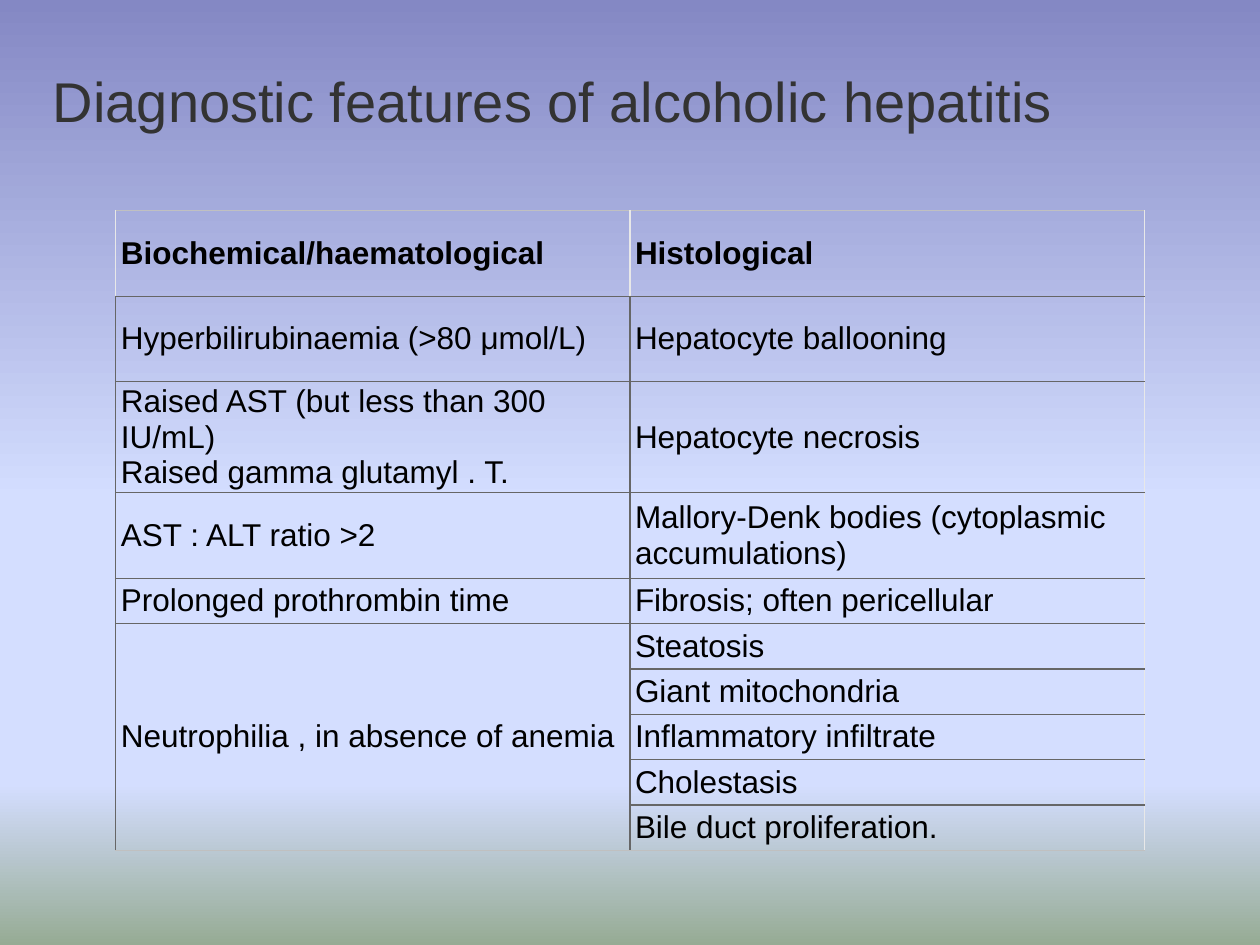
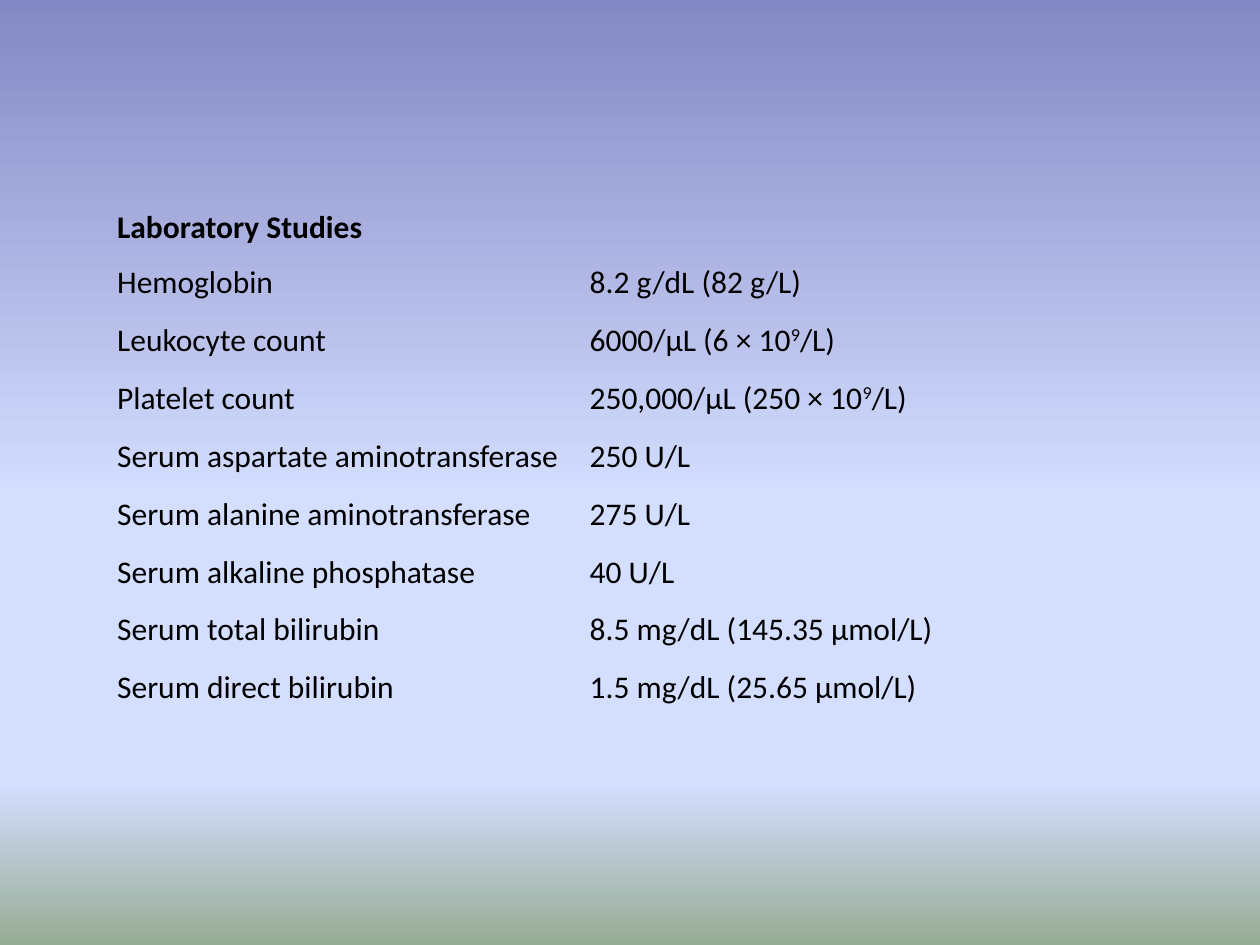
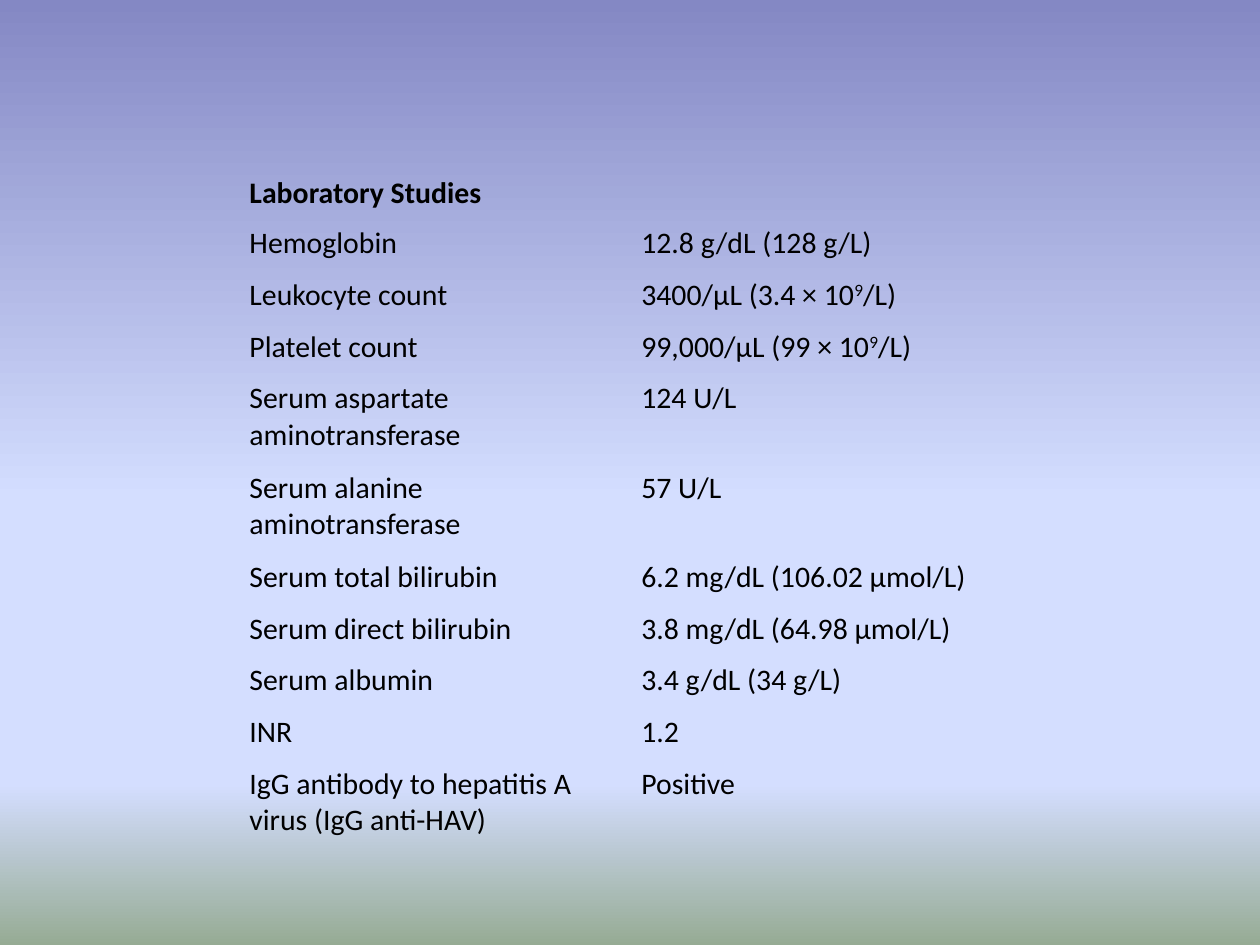
from dataclasses import dataclass

from lxml.etree import SubElement as Sub
from pptx import Presentation
from pptx.dml.color import RGBColor as RGB
from pptx.enum.text import MSO_ANCHOR as Anchor
from pptx.oxml.ns import qn
from pptx.util import Inches, Pt


@dataclass(frozen=True)
class Theme:
    sky: tuple = ((0, "8488C4"), (53, "D4DEFF"), (83, "D4DEFF"), (100, "96AB94"))
    ink: str = "000000"
    head: str = "333333"
    dark: str = "666666"
    mid: str = "C0C0C0"
    pale: str = "E8E8E8"
    line: float = 0.75
    sans: str = "Arial"
    body: str = "Calibri"
    big: int = 32
    text: int = 18
    small: int = 17
    plain: str = "{2D5ABB26-0587-4C30-8999-92F81FD0307C}"


theme = Theme()


def write(para, text, face, size, color, bold=False):
    """Fill a paragraph; a caret lifts the one character after it."""
    font = para.font
    font.name, font.size, font.bold = face, Pt(size), bold
    font.color.rgb = RGB.from_string(color)
    first, *rest = text.split("^")
    para.add_run().text = first
    for part in rest:
        run = para.add_run()
        run.text = part[0]
        run._r.get_or_add_rPr().set("baseline", "30000")
        para.add_run().text = part[1:]


def grid(slide, left, top, width, highs, rows, face, size, pad, mid=False):
    """Add a plain two-column table; None marks a cell to be merged."""
    table = slide.shapes.add_table(
        len(rows), 2, Inches(left), Inches(top),
        Inches(2 * width), Inches(sum(highs))).table
    table.first_row = table.horz_banding = False
    table._tbl.tblPr.find(qn("a:tableStyleId")).text = theme.plain
    for col in table.columns:
        col.width = Inches(width)
    for y, row in enumerate(rows):
        table.rows[y].height = Inches(highs[y])
        for x, text in enumerate(row):
            cell = table.cell(y, x)
            cell.fill.background()
            cell.margin_left = cell.margin_right = Inches(pad[0])
            cell.margin_top = cell.margin_bottom = Inches(pad[1])
            cell.vertical_anchor = Anchor.MIDDLE if mid or y == 0 else Anchor.TOP
            if text is None:
                continue
            frame = cell.text_frame
            for n, part in enumerate(text.split("\n")):
                para = frame.add_paragraph() if n else frame.paragraphs[0]
                write(para, part, face, size, theme.ink, y == 0)
    return table


prs = Presentation()
prs.slide_width, prs.slide_height = Inches(10), Inches(7.5)
blank = prs.slide_layouts[6]

# Shared background, top to bottom
master = prs.slide_master
fill = master.background.fill
fill.gradient()
fill.gradient_angle = 270
stops = master.element.find(".//" + qn("a:gsLst"))
for old in list(stops):
    stops.remove(old)
for pos, color in theme.sky:
    stop = Sub(stops, qn("a:gs"), pos=str(pos * 1000))
    Sub(stop, qn("a:srgbClr"), val=color)

# Slide 1: diagnostic features
slide = prs.slides.add_slide(blank)
signs = [
    ("Biochemical/haematological", "Histological"),
    ("Hyperbilirubinaemia (>80 μmol/L)", "Hepatocyte ballooning"),
    ("Raised AST (but less than 300 IU/mL)\nRaised gamma glutamyl . T.",
     "Hepatocyte necrosis"),
    ("AST : ALT ratio >2", "Mallory-Denk bodies (cytoplasmic accumulations)"),
    ("Prolonged prothrombin time", "Fibrosis; often pericellular"),
    ("Neutrophilia , in absence of anemia", "Steatosis"),
    (None, "Giant mitochondria"),
    (None, "Inflammatory infiltrate"),
    (None, "Cholestasis"),
    (None, "Bile duct proliferation."),
]
table = grid(slide, 0.92, 1.67, 4.08, [0.68] * 4 + [0.36] * 6, signs,
             theme.sans, theme.text, (0.04, 0.02), mid=True)
last = len(signs) - 1
table.cell(5, 0).merge(table.cell(last, 0))

# Cell borders: pale header and right edge, grey top and foot
for y in range(len(signs)):
    for x in range(2):
        cell = table.cell(y, x)
        if cell.is_spanned:
            continue
        foot = y + cell.span_height - 1 == last
        edges = {
            "lnL": theme.dark if y else theme.pale,
            "lnR": theme.dark if y and x == 0 else theme.pale,
            "lnT": theme.dark if y else theme.mid,
            "lnB": theme.mid if foot else theme.dark,
        }
        props = cell._tc.get_or_add_tcPr()
        for n, (tag, color) in enumerate(edges.items()):
            edge = Sub(props, qn("a:" + tag), w=str(Pt(theme.line)))
            Sub(Sub(edge, qn("a:solidFill")), qn("a:srgbClr"), val=color)
            props.insert(n, edge)

# Title
frame = slide.shapes.add_textbox(
    Inches(0.42), Inches(0.51), Inches(9.08), Inches(0.84)).text_frame
frame.word_wrap = True
frame.margin_left = frame.margin_right = frame.margin_bottom = 0
frame.margin_top = Inches(0.02)
write(frame.paragraphs[0], "Diagnostic features of alcoholic hepatitis",
      theme.sans, theme.big, theme.head)

# Slides 2 and 3: laboratory studies
title = ("Laboratory Studies", None)
first = [
    title,
    ("Hemoglobin", "8.2 g/dL (82 g/L)"),
    ("Leukocyte count", "6000/μL (6 × 10^9/L)"),
    ("Platelet count", "250,000/μL (250 × 10^9/L)"),
    ("Serum aspartate aminotransferase", "250 U/L"),
    ("Serum alanine aminotransferase", "275 U/L"),
    ("Serum alkaline phosphatase", "40 U/L"),
    ("Serum total bilirubin", "8.5 mg/dL (145.35 μmol/L)"),
    ("Serum direct bilirubin", "1.5 mg/dL (25.65 μmol/L)"),
]
second = [
    title,
    ("Hemoglobin", "12.8 g/dL (128 g/L)"),
    ("Leukocyte count", "3400/μL (3.4 × 10^9/L)"),
    ("Platelet count", "99,000/μL (99 × 10^9/L)"),
    ("Serum aspartate aminotransferase", "124 U/L"),
    ("Serum alanine aminotransferase", "57 U/L"),
    ("Serum total bilirubin", "6.2 mg/dL (106.02 μmol/L)"),
    ("Serum direct bilirubin", "3.8 mg/dL (64.98 μmol/L)"),
    ("Serum albumin", "3.4 g/dL (34 g/L)"),
    ("INR", "1.2"),
    ("IgG antibody to hepatitis A virus (IgG anti-HAV)", "Positive"),
]
short, tall = 0.41, 0.71
mixed = [short] * 4 + [tall] * 2 + [short] * 4 + [tall]
labs = [
    (0.83, 1.58, 3.75, [0.46] * 9, first, theme.text, (0.1, 0.05)),
    (1.89, 1.33, 3.11, mixed, second, theme.small, (0.09, 0.05)),
]
for left, top, width, highs, rows, size, pad in labs:
    slide = prs.slides.add_slide(blank)
    table = grid(slide, left, top, width, highs, rows, theme.body, size, pad)
    table.cell(0, 0).merge(table.cell(0, 1))

prs.save("out.pptx")
